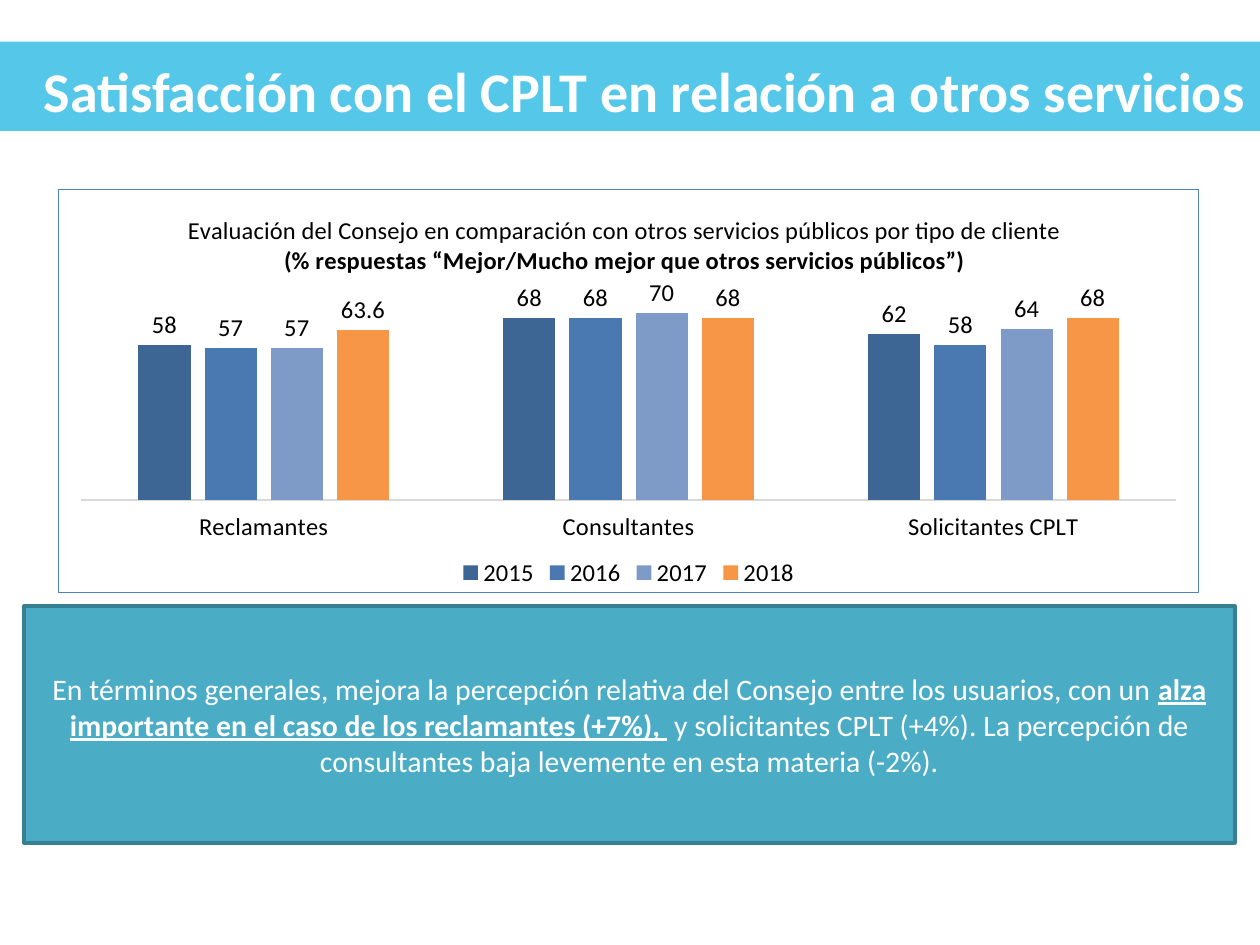
from lxml import etree
from pptx import Presentation
from pptx.chart.data import CategoryChartData
from pptx.dml.color import RGBColor
from pptx.enum.chart import XL_CHART_TYPE as ChartType
from pptx.enum.chart import XL_LABEL_POSITION as LabelPosition
from pptx.enum.chart import XL_LEGEND_POSITION as LegendPosition
from pptx.enum.chart import XL_TICK_LABEL_POSITION as TickLabels
from pptx.enum.chart import XL_TICK_MARK as TickMark
from pptx.enum.shapes import MSO_SHAPE as Preset
from pptx.enum.text import MSO_ANCHOR as Anchor
from pptx.enum.text import PP_ALIGN as Align
from pptx.oxml import parse_xml
from pptx.oxml.ns import nsdecls, qn
from pptx.util import Inches, Pt

COLORS = {
    "band": "55C8E9", "white": "FFFFFF", "black": "000000",
    "axis": "D9D9D9", "frame": "4F81BD",
    "panel": "4BACC6", "panel_line": "377F92",
}
FONT = "Calibri"
CATEGORIES = ["Reclamantes", "Consultantes", "Solicitantes CPLT"]
SERIES = [
    ("2015", (58, 68, 62), "3E6695"),
    ("2016", (57, 68, 58), "4A79B1"),
    ("2017", (57, 70, 64), "7E9BC8"),
    ("2018", (63.6, 68, 68), "F79646"),
]


def rgb(name):
    return RGBColor.from_string(COLORS[name])


def style_font(font, size, color, bold=False, underline=False):
    font.name = FONT
    font.size = Pt(size)
    font.bold = bold
    font.underline = underline
    font.color.rgb = rgb(color)


def add_span(para, text, **style):
    span = para.add_run()
    span.text = text
    style_font(span.font, **style)


def add_box(page, left, top, width, height, fill, line=None):
    box = page.shapes.add_shape(
        Preset.RECTANGLE, Inches(left), Inches(top), Inches(width), Inches(height))
    box.shadow.inherit = False
    box.fill.solid()
    box.fill.fore_color.rgb = rgb(fill)
    if line:
        box.line.color.rgb = rgb(line)
        box.line.width = Pt(2)
    else:
        box.line.fill.background()
    return box


def add_heading(page, left, top, width, height):
    add_box(page, left, top, width, height, "band")
    box = page.shapes.add_textbox(
        Inches(left + 0.25), Inches(top + 0.07), Inches(9.83), Inches(0.64))
    box.text_frame.word_wrap = False
    add_span(box.text_frame.paragraphs[0],
             "Satisfacción con el CPLT en relación a otros servicios",
             size=32, color="white", bold=True)


def set_layout(parent, position, **fractions):
    for old in parent.findall(qn("c:layout")):
        parent.remove(old)
    layout = etree.Element(qn("c:layout"))
    manual = etree.SubElement(layout, qn("c:manualLayout"))
    if "w" in fractions:
        etree.SubElement(manual, qn("c:layoutTarget"), val="inner")
    for mode in ("xMode", "yMode"):
        etree.SubElement(manual, qn(f"c:{mode}"), val="edge")
    for name, value in fractions.items():
        etree.SubElement(manual, qn(f"c:{name}"), val=str(value))
    parent.insert(position, layout)


def add_chart_frame(chart):
    frame = parse_xml(
        f'<c:spPr {nsdecls("c", "a")}>'
        f'<a:solidFill><a:srgbClr val="{COLORS["white"]}"/></a:solidFill>'
        f'<a:ln w="{Pt(0.75)}"><a:solidFill><a:srgbClr val="{COLORS["frame"]}"/>'
        '</a:solidFill></a:ln></c:spPr>')
    chart._chartSpace.find(qn("c:chart")).addnext(frame)


def add_chart_title(chart):
    frame = chart.chart_title.text_frame
    add_span(frame.paragraphs[0],
             "Evaluación del Consejo en comparación con otros servicios "
             "públicos por tipo de cliente", size=14, color="black")
    add_span(frame.add_paragraph(),
             "(% respuestas “Mejor/Mucho mejor que otros servicios públicos”)",
             size=14, color="black", bold=True)
    chart.chart_title.include_in_layout = False
    set_layout(chart._chartSpace.find(".//" + qn("c:title")), 1, x=0.11, y=0.05)


def add_rating_chart(page, left, top, width, height):
    data = CategoryChartData()
    data.categories = CATEGORIES
    for name, values, _ in SERIES:
        data.add_series(name, values)
    chart = page.shapes.add_chart(
        ChartType.COLUMN_CLUSTERED, Inches(left), Inches(top),
        Inches(width), Inches(height), data).chart
    style_font(chart.font, 14, "black")
    add_chart_frame(chart)
    add_chart_title(chart)

    chart.has_legend = True
    chart.legend.position = LegendPosition.BOTTOM
    chart.legend.include_in_layout = False
    style_font(chart.legend.font, 14, "black")

    axis = chart.category_axis
    axis.major_tick_mark = TickMark.NONE
    axis.tick_label_position = TickLabels.LOW
    axis.format.line.color.rgb = rgb("axis")
    axis.format.line.width = Pt(0.75)
    style_font(axis.tick_labels.font, 14, "black")
    scale = chart.value_axis
    scale.visible = False
    scale.has_major_gridlines = False
    scale.minimum_scale = 0
    scale.maximum_scale = 80

    plot = chart.plots[0]
    plot.gap_width = 219
    plot.overlap = -27
    plot.vary_by_categories = False
    for series, (_, _, color) in zip(plot.series, SERIES):
        series.format.fill.solid()
        series.format.fill.fore_color.rgb = RGBColor.from_string(color)
        labels = series.data_labels
        labels.show_value = True
        labels.position = LabelPosition.OUTSIDE_END
        style_font(labels.font, 14, "black")
    set_layout(chart._chartSpace.find(".//" + qn("c:plotArea")), 0,
               x=0.02, y=0.24, w=0.96, h=0.53)


def add_conclusion(page, left, top, width, height):
    box = add_box(page, left, top, width, height, "panel", "panel_line")
    frame = box.text_frame
    frame.word_wrap = True
    frame.vertical_anchor = Anchor.MIDDLE
    para = frame.paragraphs[0]
    para.alignment = Align.CENTER
    style = {"size": 17, "color": "white"}
    add_span(para, "En términos generales, mejora la percepción relativa del "
             "Consejo entre los usuarios, con un ", **style)
    add_span(para, "alza importante en el caso de los reclamantes (+7%), ",
             bold=True, underline=True, **style)
    add_span(para, " y solicitantes CPLT (+4%). La percepción de consultantes "
             "baja levemente en esta materia (-2%).", **style)


def main():
    deck = Presentation()
    deck.slide_width = Inches(10)
    deck.slide_height = Inches(7.5)
    page = deck.slides.add_slide(deck.slide_layouts[6])
    add_heading(page, 0, 0.33, 10, 0.71)
    add_rating_chart(page, 0.46, 1.5, 9.06, 3.21)
    add_conclusion(page, 0.19, 4.81, 9.61, 1.88)
    deck.save("out.pptx")


if __name__ == "__main__":
    main()
